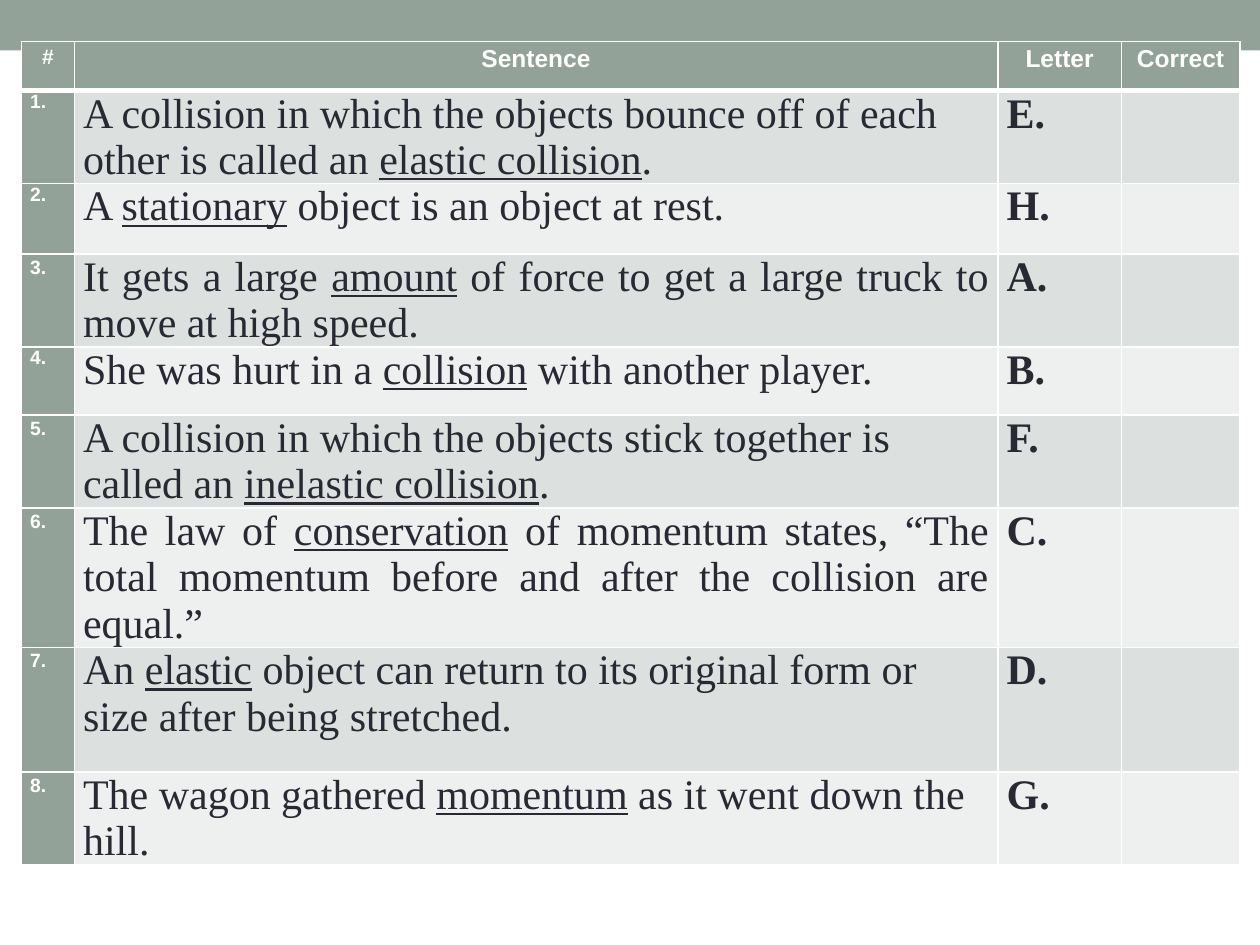
from pptx import Presentation
from pptx.dml.color import RGBColor
from pptx.enum.shapes import MSO_SHAPE as Shape
from pptx.enum.text import PP_ALIGN as Align
from pptx.util import Inches, Pt
from lxml.etree import SubElement
from pptx.oxml.ns import qn

SAGE, WHITE, INK = "93A299", "FFFFFF", "292934"
BANDS = ["DCE0DE", "EEF0EF"]


def color(hex_value):
    return RGBColor.from_string(hex_value)


def fill_cell(cell, fill, runs, font, size, ink, align=None, spacing=None, gap=3, bold=False, top=1, bottom=1):
    """Write (text, underlined) runs, then the white borders and the fill."""
    cell.margin_left = cell.margin_right = Inches(0.07)
    cell.margin_top = cell.margin_bottom = 0
    paragraph = cell.text_frame.paragraphs[0]
    paragraph.alignment = align
    paragraph.line_spacing = spacing
    paragraph.space_before = paragraph.space_after = Pt(gap)
    for text, underlined in runs:
        run = paragraph.add_run()
        run.text = text
        run.font.name, run.font.size = font, Pt(size)
        run.font.bold, run.font.underline = bold, underlined
        run.font.color.rgb = color(ink)
    properties = cell._tc.get_or_add_tcPr()
    for side, width in (("L", 1), ("R", 1), ("T", top), ("B", bottom)):
        border = SubElement(properties, qn(f"a:ln{side}"), w=str(Pt(width)))
        SubElement(SubElement(border, qn("a:solidFill")), qn("a:srgbClr"), val=WHITE)
    cell.fill.solid()
    cell.fill.fore_color.rgb = color(fill)


prs = Presentation()
prs.slide_width, prs.slide_height = Inches(10), Inches(7.5)
slide = prs.slides.add_slide(prs.slide_layouts[6])

# Band across the top
band = slide.shapes.add_shape(Shape.RECTANGLE, 0, 0, Inches(10), Inches(0.4))
band.shadow.inherit = False
band.fill.solid()
band.fill.fore_color.rgb = color(SAGE)
band.line.fill.background()

# Sentence parts (the middle one is underlined), letter, sentence alignment, number spacing
headings = ["#", "Sentence", "Letter", "Correct"]
answers = [
    (["A collision in which the objects bounce off of each other is called an ", "elastic collision", "."],
     "E.", None, None),
    (["A ", "stationary", " object is an object at rest."], "H.", Align.JUSTIFY, None),
    (["It gets a large ", "amount", " of force to get a large truck to move at high speed."],
     "A.", Align.JUSTIFY, 1.15),
    (["She was hurt in a ", "collision", " with another player."], "B.", None, None),
    (["A collision in which the objects stick together is called an ", "inelastic collision", "."],
     "F.", None, 1.15),
    (["The law of ", "conservation",
      " of momentum states, “The total momentum before and after the collision are equal.”"],
     "C.", Align.JUSTIFY, 1.15),
    (["An ", "elastic", " object can return to its original form or size after being stretched."],
     "D.", None, 1.15),
    (["The wagon gathered ", "momentum", " as it went down the hill."], "G.", None, 1.15),
]
column_widths = [0.42, 7.33, 0.98, 0.94]
row_heights = [0.39, 0.53, 0.56, 0.54, 0.54, 0.73, 0.54, 0.99, 0.54]

# Answer table
answer_frame = slide.shapes.add_table(len(row_heights), len(column_widths),
                                      Inches(0.17), Inches(0.33), Inches(9.67), Inches(6.88))
answer_table = answer_frame.table
for column, width in zip(answer_table.columns, column_widths):
    column.width = Inches(width)
for row, height in zip(answer_table.rows, row_heights):
    row.height = Inches(height)
answer_frame.height = Inches(6.88)

# Heading row
for column, heading in enumerate(headings):
    fill_cell(answer_table.cell(0, column), SAGE, [(heading, False)], "Arial", 14 if column else 12, WHITE,
              Align.CENTER, 1.15, gap=6, bold=True, bottom=3)

# Numbered sentences with their letters
for number, (parts, letter, align, spacing) in enumerate(answers, start=1):
    number_cell, sentence_cell, letter_cell, correct_cell = answer_table.rows[number].cells
    shade = BANDS[(number - 1) % 2]
    top = 3 if number == 1 else 1
    sentence = [(part, index == 1) for index, part in enumerate(parts)]
    fill_cell(number_cell, SAGE, [(f"{number}.", False)], "Arial", 11, WHITE,
              Align.JUSTIFY, spacing, gap=6, bold=True, top=top)
    fill_cell(sentence_cell, shade, sentence, "Times New Roman", 24, INK, align, top=top)
    fill_cell(letter_cell, shade, [(letter, False)], "Times New Roman", 24, INK, bold=True, top=top)
    fill_cell(correct_cell, shade, [], "Arial", 14, INK, top=top)

prs.save("out.pptx")
